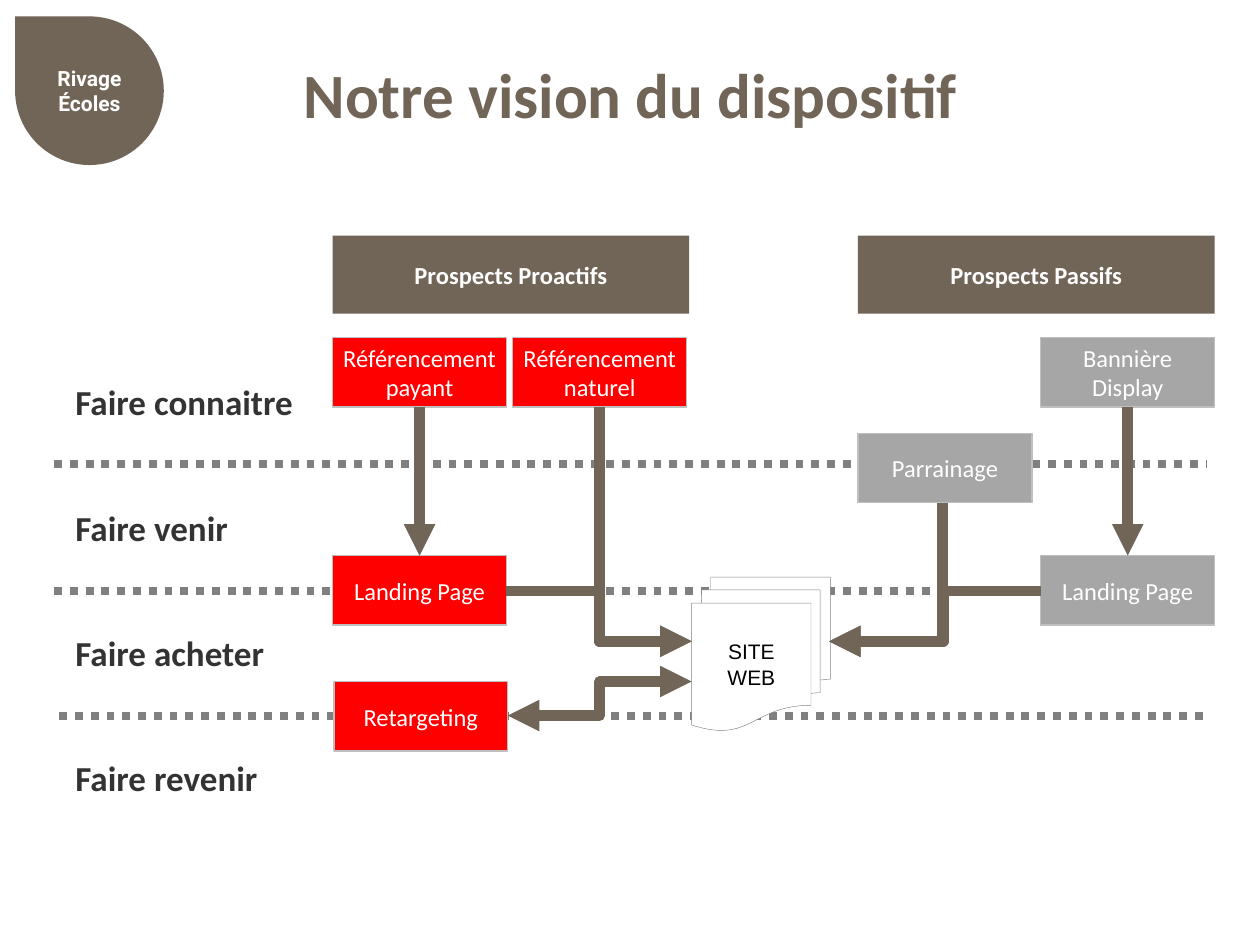
import dataclasses

import pptx
import pptx.dml.color
import pptx.enum.dml
import pptx.enum.shapes
import pptx.enum.text
import pptx.oxml.ns
import pptx.util

Inches = pptx.util.Inches
Pt = pptx.util.Pt
SHAPE = pptx.enum.shapes.MSO_SHAPE
CONNECTOR = pptx.enum.shapes.MSO_CONNECTOR
ALIGN = pptx.enum.text.PP_ALIGN
qn = pptx.oxml.ns.qn


@dataclasses.dataclass(frozen=True)
class Theme:
    brown: str = "716558"
    red: str = "FF0000"
    gray: str = "A6A6A6"
    outline: str = "BFBFBF"
    dots: str = "808080"
    dark: str = "333333"
    white: str = "FFFFFF"
    black: str = "000000"
    font: str = "Calibri"
    site_font: str = "Arial"
    badge_font: str = "Roboto"
    title_size: int = 36
    stage_size: int = 20
    label_size: int = 14
    small_size: int = 12
    arrow_width: float = 6
    dots_width: float = 4.5


THEME = Theme()
BOX_WIDTH, BOX_HEIGHT = 1.38, 0.55


def rgb(value):
    return pptx.dml.color.RGBColor.from_string(value)


def write(shape, lines, size, color, bold=False, font=THEME.font, align=ALIGN.CENTER, margin=None):
    frame = shape.text_frame
    frame.word_wrap = True
    frame.vertical_anchor = pptx.enum.text.MSO_ANCHOR.MIDDLE
    if margin is not None:
        frame.margin_left = frame.margin_right = Inches(margin)
        frame.margin_top = frame.margin_bottom = Inches(margin)
    frame.text = "\n".join(lines)
    for para in frame.paragraphs:
        para.alignment = align
        for span in para.runs:
            span.font.name = font
            span.font.size = Pt(size)
            span.font.bold = bold
            span.font.color.rgb = rgb(color)


def add_text(page, box):
    return page.shapes.add_textbox(*map(Inches, box))


def add_panel(page, kind, box, fill, line=None, line_width=0.75):
    shape = page.shapes.add_shape(kind, *map(Inches, box))
    shape.shadow.inherit = False
    shape.fill.solid()
    shape.fill.fore_color.rgb = rgb(fill)
    if line:
        shape.line.color.rgb = rgb(line)
        shape.line.width = Pt(line_width)
    else:
        shape.line.fill.background()
    return shape


def add_label(page, left, top, text, fill):
    shape = add_panel(page, SHAPE.RECTANGLE, (left, top, BOX_WIDTH, BOX_HEIGHT), fill, THEME.outline)
    write(shape, [text], THEME.label_size, THEME.white, margin=0.04)
    return shape


def add_line(page, kind, start, end, color=THEME.brown, width=THEME.arrow_width, heads=()):
    line = page.shapes.add_connector(kind, *map(Inches, (*start, *end)))
    line.line.color.rgb = rgb(color)
    line.line.width = Pt(width)
    properties = line._element.spPr
    outline = properties.find(qn("a:ln"))
    for head in heads:
        outline.append(outline.makeelement(qn(f"a:{head}"), {"type": "triangle"}))
    properties.append(properties.makeelement(qn("a:effectLst"), {}))
    return line


def add_side_elbow(page, start, end, heads=("tailEnd",), bend=0.5):
    line = add_line(page, CONNECTOR.ELBOW, start, end, heads=heads)
    geometry = line._element.spPr.find(qn("a:prstGeom"))
    values = geometry.find(qn("a:avLst"))
    values.append(values.makeelement(
        qn("a:gd"), {"name": "adj1", "fmla": f"val {round(bend * 100000)}"}))


def add_down_elbow(page, start, end):
    across, down = abs(end[0] - start[0]), end[1] - start[1]
    middle_x, middle_y = (start[0] + end[0]) / 2, (start[1] + end[1]) / 2
    left, right = middle_x - down / 2, middle_x + down / 2
    top, bottom = middle_y - across / 2, middle_y + across / 2
    goes_right = end[0] > start[0]
    first, last = (right, left) if goes_right else (left, right)
    line = add_line(page, CONNECTOR.ELBOW, (first, top), (last, bottom), heads=("tailEnd",))
    properties = line._element.spPr
    properties.find(qn("a:prstGeom")).set("prst", "bentConnector2")
    properties.find(qn("a:xfrm")).set("rot", str((270 if goes_right else 90) * 60000))


def join_down(page, upper, lower):
    line = add_line(page, CONNECTOR.STRAIGHT, (0, 0), (1, 1), heads=("tailEnd",))
    line.begin_connect(upper, 2)
    line.end_connect(lower, 0)


def add_title(page, box):
    write(add_text(page, box), ["Notre vision du dispositif"], THEME.title_size, THEME.brown, True)


def add_badge(page, box):
    badge = add_panel(page, SHAPE.TEAR, box, THEME.brown)
    badge.rotation = 270
    write(badge, ["Rivage Écoles"], THEME.small_size, THEME.white, True, THEME.badge_font, margin=0)
    badge.text_frame._txBody.bodyPr.set("vert", "vert")


def add_stages(page, box):
    stages = add_text(page, box)
    names = ["Faire connaitre", "Faire venir", "Faire acheter", "Faire revenir"]
    write(stages, names, THEME.stage_size, THEME.dark, True, align=ALIGN.LEFT)
    for para in stages.text_frame.paragraphs[1:]:
        para.space_before = Pt(47.6)
    for start, y, length in ((0.43, 3.68, 9.14), (0.43, 4.69, 9.14), (0.47, 5.68, 9.13)):
        line = add_line(page, CONNECTOR.STRAIGHT, (start, y), (start + length, y),
                        THEME.dots, THEME.dots_width)
        line.line.dash_style = pptx.enum.dml.MSO_LINE.ROUND_DOT


def add_heading(page, box, text):
    heading = add_panel(page, SHAPE.RECTANGLE, box, THEME.brown)
    write(heading, [text], THEME.label_size, THEME.white, True, margin=0.04)


def add_site(page, box):
    site = add_panel(page, SHAPE.FLOWCHART_MULTIDOCUMENT, box, THEME.white, THEME.dots, 0.25)
    write(site, ["SITE WEB"], THEME.small_size, THEME.black, font=THEME.site_font)


def add_active_prospects(page, box, site_left):
    left, top, width, height = box
    add_heading(page, (left, top, width, 0.62), "Prospects Proactifs")
    paid = add_label(page, left, top + 0.81, "Référencement payant", THEME.red)
    add_label(page, left + 1.43, top + 0.81, "Référencement naturel", THEME.red)
    landing = add_label(page, left, top + 2.54, "Landing Page", THEME.red)
    add_label(page, left + 0.01, top + height - BOX_HEIGHT, "Retargeting", THEME.red)
    join_down(page, paid, landing)
    edge = left + BOX_WIDTH
    add_down_elbow(page, (left + 2.12, top + 1.36), (site_left, top + 3.22))
    add_side_elbow(page, (edge, top + 2.82), (site_left, top + 3.22))
    add_side_elbow(page, (edge + 0.01, top + 3.81), (site_left, top + 3.54), ("headEnd", "tailEnd"))


def add_passive_prospects(page, box, site_right):
    left, top, width, height = box
    add_heading(page, (left, top, width, 0.62), "Prospects Passifs")
    column = left + width - BOX_WIDTH
    banner = add_label(page, column, top + 0.81, "Bannière Display", THEME.gray)
    landing = add_label(page, column, top + height - BOX_HEIGHT, "Landing Page", THEME.gray)
    join_down(page, banner, landing)
    add_side_elbow(page, (column, top + 2.82), (site_right, top + 3.22), bend=0.46)
    add_down_elbow(page, (left + 0.67, top + 1.93), (site_right, top + 3.22))
    add_label(page, left, top + 1.57, "Parrainage", THEME.gray)


def main():
    deck = pptx.Presentation()
    deck.slide_width, deck.slide_height = Inches(10), Inches(7.5)
    page = deck.slides.add_slide(deck.slide_layouts[6])
    add_stages(page, (0.5, 3.05, 2.06, 3.26))
    add_title(page, (1.46, 0.23, 7.09, 1.02))
    add_site(page, (5.49, 4.58, 1.1, 1.22))
    add_active_prospects(page, (2.64, 1.87, 2.83, 4.09), 5.49)
    add_passive_prospects(page, (6.81, 1.87, 2.83, 3.09), 6.58)
    add_badge(page, (0.12, 0.13, 1.18, 1.18))
    deck.save("out.pptx")


if __name__ == "__main__":
    main()
